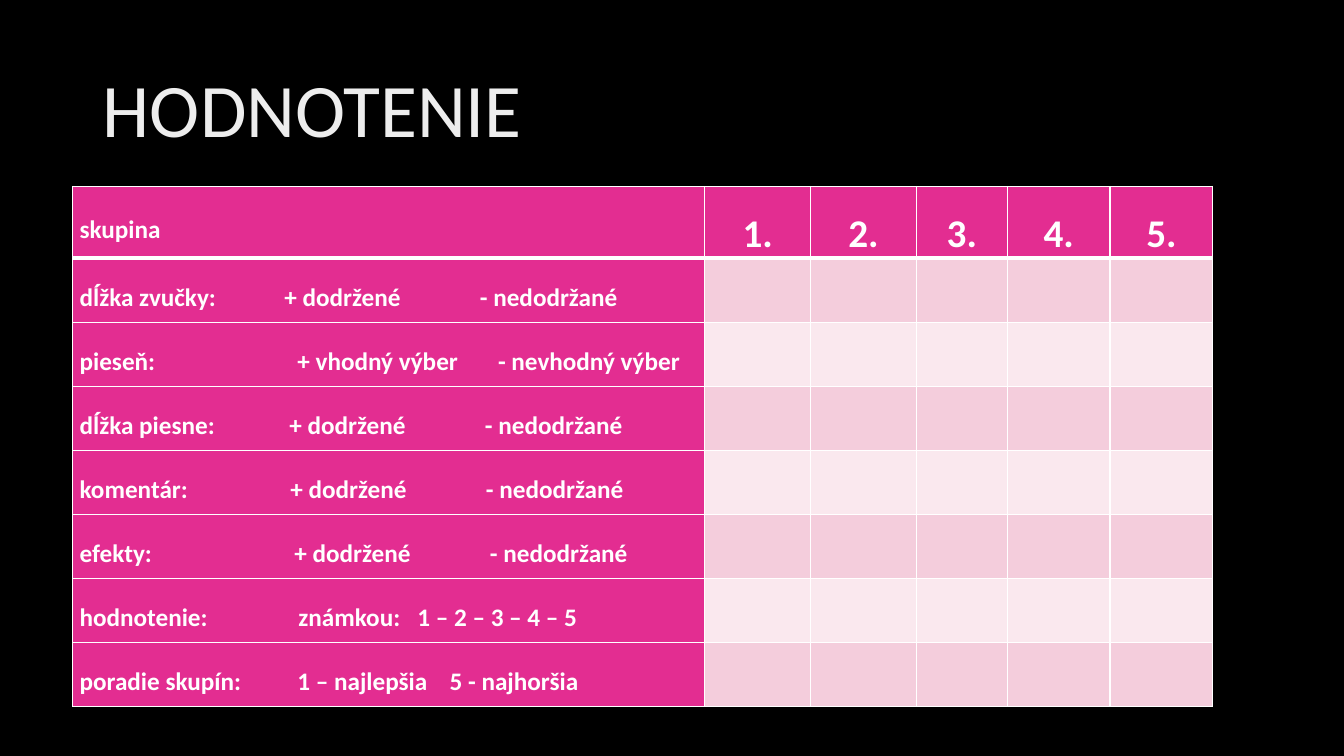
import dataclasses

import lxml.etree
import pptx
import pptx.dml.color
import pptx.enum.text
import pptx.oxml.ns
import pptx.util

Inches = pptx.util.Inches
Pt = pptx.util.Pt
ALIGN = pptx.enum.text.PP_ALIGN
MIDDLE = pptx.enum.text.MSO_ANCHOR.MIDDLE


@dataclasses.dataclass(frozen=True)
class Theme:
    font: str = "Calibri"
    background: str = "000000"
    accent: str = "E32D91"
    text: str = "FFFFFF"
    border: str = "FFFFFF"
    bands: tuple = ("F4CDDC", "FAE8EE")
    title_gradient: tuple = ((0, "DEDEDE"), (28, "EDEDED"), (100, "FFFFFF"))
    title_angle: int = 80
    title_size: int = 54
    number_size: int = 28
    label_size: int = 18
    thin: int = 1
    thick: int = 3


# Table content: label parts with the tab stop of each later part
GROUPS = ["1.", "2.", "3.", "4.", "5."]
COLUMN_WIDTHS = [6.27, 1.05, 1.05, 0.9, 1.02, 1.02]
KEPT = ["+ dodržené", "- nedodržané"]
CRITERIA = [
    (["dĺžka zvučky:", *KEPT], [2.03, 3.97]),
    (["pieseň:", "+ vhodný výber", "- nevhodný výber"], [2.16, 4.15]),
    (["dĺžka piesne:", *KEPT], [2.08, 4.02]),
    (["komentár:", *KEPT], [2.09, 4.03]),
    (["efekty:", *KEPT], [2.13, 4.07]),
    (["hodnotenie:", "známkou:", "1 – 2 – 3 – 4 – 5"], [2.17, 3.35]),
    (["poradie skupín:", "1 – najlepšia", "5 - najhoršia"], [2.16, 3.67]),
]


def rgb(color):
    return pptx.dml.color.RGBColor.from_string(color)


def add_xml(parent, tag, **attributes):
    values = {name: str(value) for name, value in attributes.items()}
    return lxml.etree.SubElement(parent, pptx.oxml.ns.qn(tag), values)


def write_text(text_frame, text, *, font, size, color=None, bold=False,
               align=ALIGN.LEFT, spacing=1.0, tabs=()):
    paragraph = text_frame.paragraphs[0]
    paragraph.alignment = align
    paragraph.line_spacing = spacing
    if tabs:
        tab_list = add_xml(paragraph._p.get_or_add_pPr(), "a:tabLst")
        for position in tabs:
            add_xml(tab_list, "a:tab", pos=Inches(position), algn="l")
    run = paragraph.add_run()
    run.text = text
    run.font.name = font
    run.font.size = Pt(size)
    run.font.bold = bold
    if color:
        run.font.color.rgb = rgb(color)
    return run


class SlideBuilder:
    def __init__(self, presentation, theme):
        self.theme = theme
        self.slide = presentation.slides.add_slide(presentation.slide_layouts[5])
        fill = self.slide.background.fill
        fill.solid()
        fill.fore_color.rgb = rgb(theme.background)

    def title(self, text, left, top, width, height):
        theme = self.theme
        shape = self.slide.shapes.title
        shape.left, shape.top = Inches(left), Inches(top)
        shape.width, shape.height = Inches(width), Inches(height)
        shape.text_frame.word_wrap = True
        shape.text_frame.vertical_anchor = MIDDLE
        run = write_text(shape.text_frame, text, font=theme.font,
                         size=theme.title_size, spacing=0.9)
        # Gradient lettering, placed ahead of the typeface element
        properties = run.font._element
        gradient = add_xml(properties, "a:gradFill")
        stops = add_xml(gradient, "a:gsLst")
        for position, color in theme.title_gradient:
            stop = add_xml(stops, "a:gs", pos=position * 1000)
            add_xml(stop, "a:srgbClr", val=color)
        add_xml(gradient, "a:lin", ang=theme.title_angle * 60000, scaled=0)
        properties.insert(0, gradient)

    def table(self, rows, left, top, height, widths):
        frame = self.slide.shapes.add_table(
            rows, len(widths), Inches(left), Inches(top),
            Inches(sum(widths)), Inches(height))
        for column, width in zip(frame.table.columns, widths):
            column.width = Inches(width)
        return frame.table

    def cell(self, cell, fill, text="", size=None, top=None, bottom=None, **text_format):
        theme = self.theme
        properties = cell._tc.get_or_add_tcPr()
        borders = {"L": theme.thin, "R": theme.thin,
                   "T": top or theme.thin, "B": bottom or theme.thin}
        for side, width in borders.items():
            line = add_xml(properties, f"a:ln{side}", w=Pt(width))
            add_xml(add_xml(line, "a:solidFill"), "a:srgbClr", val=theme.border)
        cell.fill.solid()
        cell.fill.fore_color.rgb = rgb(fill)
        if text:
            cell.vertical_anchor = MIDDLE
            cell.margin_left = cell.margin_right = Inches(0.07)
            cell.margin_top = cell.margin_bottom = 0
            write_text(cell.text_frame, text, font=theme.font,
                       size=size or theme.label_size, color=theme.text,
                       bold=True, spacing=1.5, **text_format)


def main():
    theme = Theme()
    presentation = pptx.Presentation()
    presentation.slide_width = Inches(13.33)
    presentation.slide_height = Inches(7.5)
    builder = SlideBuilder(presentation, theme)
    builder.title("HODNOTENIE", 0.92, 0.4, 11.5, 1.45)
    table = builder.table(len(CRITERIA) + 1, 0.72, 1.85, 5.08, COLUMN_WIDTHS)

    # Header row
    builder.cell(table.cell(0, 0), theme.accent, "skupina", bottom=theme.thick)
    for column, group in enumerate(GROUPS, start=1):
        builder.cell(table.cell(0, column), theme.accent, group,
                     size=theme.number_size, bottom=theme.thick,
                     align=ALIGN.CENTER)

    # Criteria with empty, banded cells for the marks
    for row, (parts, tabs) in enumerate(CRITERIA, start=1):
        top = theme.thick if row == 1 else theme.thin
        builder.cell(table.cell(row, 0), theme.accent, "\t".join(parts),
                     top=top, tabs=tabs)
        band = theme.bands[(row - 1) % len(theme.bands)]
        for column in range(1, len(COLUMN_WIDTHS)):
            builder.cell(table.cell(row, column), band, top=top)

    presentation.save("out.pptx")


if __name__ == "__main__":
    main()
